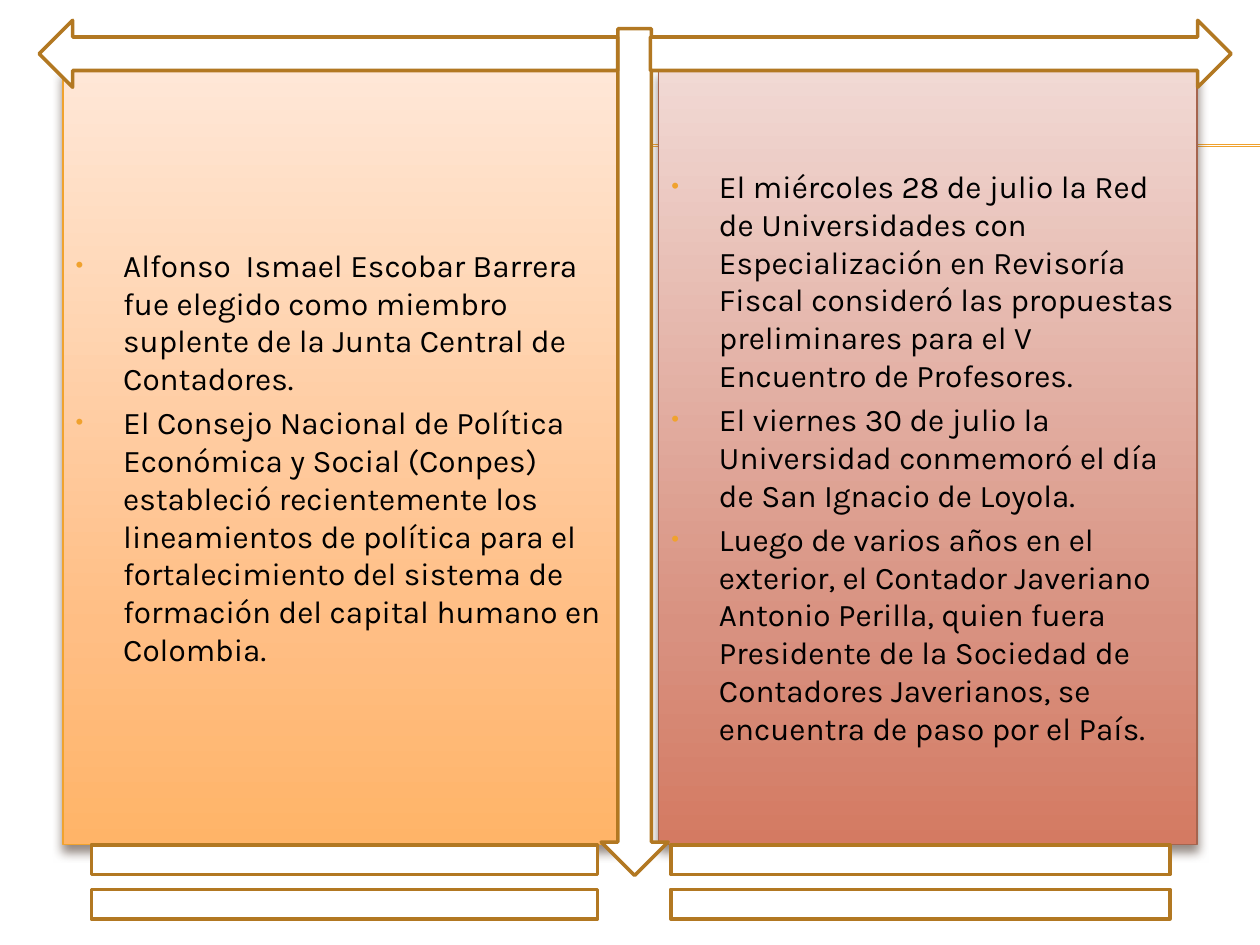
from copy import deepcopy

from lxml import etree
from pptx import Presentation
from pptx import util as u
from pptx.dml.color import RGBColor
from pptx.enum import shapes, text
from pptx.oxml.ns import qn

COLORS = {
    "white": "FFFFFF", "black": "000000", "gold": "F0A22E",
    "bronze": "B27822", "brick": "A5644E", "shadow": "4E3B30",
}
ORANGE_STOPS = [(0, "FFE7D7"), (0.72, "FFBE84"), (1, "FFB468")]
RED_STOPS = [(0, "F1D9D4"), (0.72, "D89180"), (1, "D47A62")]
FONT = "Karla"

LEFT_NEWS = [
    "Alfonso  Ismael Escobar Barrera  fue elegido como miembro suplente de la "
    "Junta Central de Contadores.",
    "El Consejo Nacional de Política Económica y Social (Conpes) estableció "
    "recientemente los lineamientos de política para el fortalecimiento del "
    "sistema de formación del capital humano en Colombia.",
]
RIGHT_NEWS = [
    "El miércoles 28 de julio la Red de Universidades con Especialización en "
    "Revisoría Fiscal consideró las propuestas preliminares para el V Encuentro "
    "de Profesores.",
    "El viernes 30 de julio la Universidad conmemoró el día de San Ignacio de "
    "Loyola.",
    "Luego de varios años en el exterior, el Contador Javeriano Antonio Perilla, "
    "quien fuera Presidente de la Sociedad de Contadores Javerianos, se encuentra "
    "de paso por el País.",
]


def rgb(name):
    return RGBColor.from_string(COLORS[name])


def add_element(parent, tag, **attributes):
    element = etree.SubElement(parent, qn(tag))
    for key, value in attributes.items():
        element.set(key, str(value))
    return element


def set_line(shape, color, width):
    shape.line.color.rgb = rgb(color)
    shape.line.width = u.Pt(width)


def add_rule(slide, top):
    """Add a thin gold line behind everything else."""
    rule = slide.shapes.add_connector(
        shapes.MSO_CONNECTOR.STRAIGHT, u.Cm(1.42), u.Cm(top), u.Cm(25.4), u.Cm(top))
    set_line(rule, "gold", 0.75)
    add_element(rule._element.spPr, "a:effectLst")
    slide.shapes._spTree.insert(2, rule._element)


def set_gradient(shape, stops):
    """Fill from top to bottom with three colour stops."""
    shape.fill.gradient()
    shape.fill.gradient_angle = 270
    stop_list = shape._element.spPr.find(".//" + qn("a:gsLst"))
    stop_list.append(deepcopy(stop_list[-1]))
    for stop, (position, color) in zip(shape.fill.gradient_stops, stops):
        stop.position = position
        stop.color.rgb = RGBColor.from_string(color)


def add_shadow(shape):
    effects = add_element(shape._element.spPr, "a:effectLst")
    shadow = add_element(effects, "a:outerShdw", blurRad=u.Pt(6), dist=u.Pt(4),
                         dir=5400000, rotWithShape=0)
    color = add_element(shadow, "a:srgbClr", val=COLORS["shadow"])
    add_element(color, "a:alpha", val=60000)


def add_bullet(paragraph):
    properties = paragraph._p.get_or_add_pPr()
    properties.set("marL", str(u.Cm(0.96)))
    properties.set("indent", str(-u.Cm(0.96)))
    color = add_element(properties, "a:buClr")
    add_element(color, "a:srgbClr", val=COLORS["gold"])
    add_element(properties, "a:buSzPct", val=70000)
    add_element(properties, "a:buFont", typeface="Arial")
    add_element(properties, "a:buChar", char="•")


def fill_panel(panel, left, width, stops, border, news):
    """Place a body placeholder as a shaded panel with a bulleted list."""
    panel.left, panel.top = u.Cm(left), u.Cm(1.4)
    panel.width, panel.height = u.Cm(width), u.Cm(15.62)
    set_gradient(panel, stops)
    set_line(panel, border, 0.79)
    add_shadow(panel)
    frame = panel.text_frame
    frame.word_wrap = True
    frame.auto_size = text.MSO_AUTO_SIZE.NONE
    frame.vertical_anchor = text.MSO_ANCHOR.MIDDLE
    for index, item in enumerate(news):
        paragraph = frame.add_paragraph() if index else frame.paragraphs[0]
        add_bullet(paragraph)
        paragraph.space_before = u.Pt(3.6 if index else 0)
        run = paragraph.add_run()
        run.text = item
        run.font.name = FONT
        run.font.size = u.Pt(18)
        run.font.color.rgb = rgb("black")


def add_outline_shape(slide, kind, left, top, width, height):
    shape = slide.shapes.add_shape(kind, u.Cm(left), u.Cm(top), u.Cm(width), u.Cm(height))
    shape.shadow.inherit = False
    shape.fill.solid()
    shape.fill.fore_color.rgb = rgb("white")
    set_line(shape, "bronze", 2)


def main():
    presentation = Presentation()
    presentation.slide_width, presentation.slide_height = u.Cm(25.4), u.Cm(19.05)
    slide = presentation.slides.add_slide(presentation.slide_layouts[3])
    title = slide.shapes.title._element
    title.getparent().remove(title)

    for top in (2.92, 2.95):
        add_rule(slide, top)
    fill_panel(slide.placeholders[1], 1.27, 11.23, ORANGE_STOPS, "gold", LEFT_NEWS)
    fill_panel(slide.placeholders[2], 13.28, 10.85, RED_STOPS, "brick", RIGHT_NEWS)

    kinds = shapes.MSO_SHAPE
    add_outline_shape(slide, kinds.DOWN_ARROW, 12.12, 0.58, 1.35, 17.07)
    add_outline_shape(slide, kinds.RIGHT_ARROW, 13.11, 0.41, 11.71, 1.35)
    add_outline_shape(slide, kinds.LEFT_ARROW, 0.79, 0.41, 11.66, 1.35)
    for left, width in ((0, 13.89), (11.71, 13.69)):
        add_outline_shape(slide, kinds.MATH_EQUAL, left, 16.51, width, 2.54)

    presentation.save("out.pptx")


if __name__ == "__main__":
    main()
